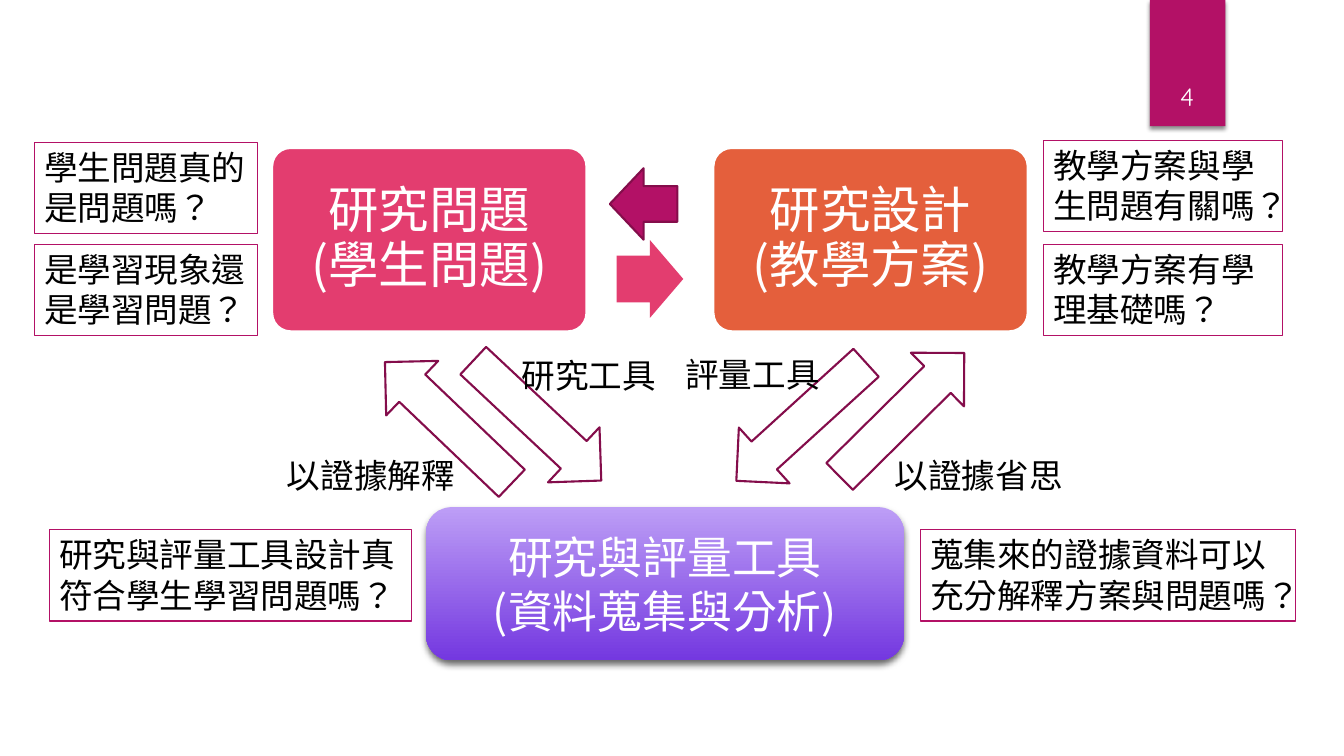
import pptx
import pptx.util
import pptx.dml.color
import pptx.enum.shapes
import pptx.enum.text
import pptx.oxml.ns
import lxml.etree

Cm, Pt = pptx.util.Cm, pptx.util.Pt
SHAPE = pptx.enum.shapes.MSO_SHAPE
ANCHOR = pptx.enum.text.MSO_ANCHOR
ALIGN = pptx.enum.text.PP_ALIGN
qn = pptx.oxml.ns.qn
RGB = pptx.dml.color.RGBColor.from_string
CJK = "Noto Sans CJK SC"
COLORS = {"magenta": "B31166", "plum": "840D4B", "pink": "E33D6F", "orange": "E45F3C",
          "lilac": "BD9EF6", "violet": "7438E0", "white": "FFFFFF", "black": "000000"}


def add_box(kind, x, y, w, h, fill=None, line=None, width=1.5, shadow=None):
    sp = s.shapes.add_shape(kind, Cm(x), Cm(y), Cm(w), Cm(h))
    sp.shadow.inherit = False
    if fill:
        sp.fill.solid()
        sp.fill.fore_color.rgb = RGB(COLORS[fill])
    else:
        sp.fill.background()
    if line:
        sp.line.color.rgb = RGB(COLORS[line])
        sp.line.width = Pt(width)
    else:
        sp.line.fill.background()
    if shadow:
        alpha, blur, dist = shadow
        effects = sp._element.spPr.find(qn("a:effectLst"))
        outer = lxml.etree.SubElement(effects, qn("a:outerShdw"), blurRad=str(Pt(blur)),
                                      dist=str(Pt(dist)), dir="5400000", rotWithShape="0")
        clr = lxml.etree.SubElement(outer, qn("a:srgbClr"), val=COLORS["black"])
        lxml.etree.SubElement(clr, qn("a:alpha"), val=str(alpha * 1000))
    return sp


def write(sp, lines, size, color, align=ALIGN.LEFT, anchor=ANCHOR.TOP, font=CJK):
    tf = sp.text_frame
    tf.word_wrap = True
    tf.vertical_anchor = anchor
    p = tf.paragraphs[0]
    p.alignment = align
    for i, line in enumerate(lines):
        if i:
            p.add_line_break()
        r = p.add_run()
        r.text = line
        r.font.size = Pt(size)
        r.font.name = font
        r.font.color.rgb = RGB(COLORS[color])
        rPr = r.font._element
        rPr.set("lang", "zh-TW")
        lxml.etree.SubElement(rPr, qn("a:ea"), typeface=font)
    return tf


prs = pptx.Presentation()
prs.slide_width, prs.slide_height = Cm(33.87), Cm(19.05)
s = prs.slides.add_slide(prs.slide_layouts[6])

# Page number tab
add_box(SHAPE.RECTANGLE, 28.98, 0, 1.9, 3.18, "magenta", shadow=(45, 3, 2))
tb = s.shapes.add_textbox(Cm(28.75), Cm(0.81), Cm(2.34), Cm(2.13))
write(tb, ["4"], 18, "white", ALIGN.CENTER, ANCHOR.BOTTOM, "Quicksand")

# Research question and research design
for x, fill, lines in [(6.86, "pink", ["研究問題", "(學生問題)"]),
                       (17.98, "orange", ["研究設計", "(教學方案)"])]:
    sp = add_box(SHAPE.ROUNDED_RECTANGLE, x, 3.73, 7.92, 4.62, fill, "white")
    sp.adjustments[0] = 0.1
    tf = write(sp, lines, 36, "white", ALIGN.CENTER, ANCHOR.MIDDLE)
    tf.paragraphs[0].line_spacing = 0.9
    tf.margin_left = tf.margin_right = tf.margin_top = tf.margin_bottom = Cm(0.38)

# Arrows between the two upper boxes
sp = add_box(SHAPE.RIGHT_ARROW, 15.54, 6.05, 1.68, 1.96, "pink")
sp.adjustments[0] = 0.6
add_box(SHAPE.LEFT_ARROW, 15.37, 4.24, 1.7, 1.8, "magenta", "plum")

# Research and assessment tools
sp = add_box(SHAPE.ROUNDED_RECTANGLE, 10.74, 12.78, 12.04, 3.86, shadow=(60, 5, 3))
sp.fill.gradient()
sp.fill.gradient_angle = 270
for stop, name in zip(sp.fill.gradient_stops, ["lilac", "violet"]):
    stop.color.rgb = RGB(COLORS[name])
write(sp, ["研究與評量工具", "(資料蒐集與分析)"], 32, "white", ALIGN.CENTER, ANCHOR.MIDDLE)

# Diagonal arrows to and from the tools
for x, y, angle in [(11.33, 9.65, 43.1), (20.52, 9.5, 315.3),
                    (17.98, 9.68, 137.7), (9.09, 9.7, 223.7)]:
    sp = add_box(SHAPE.RIGHT_ARROW, x, y, 4.42, 1.9, line="plum")
    sp.rotation = angle

# Arrow labels
for x, y, w, label in [(12.9, 8.81, 4.14, "研究工具"), (17.02, 8.79, 4.14, "評量工具"),
                       (22.3, 11.33, 4.85, "以證據省思"), (6.98, 11.33, 4.85, "以證據解釋")]:
    tb = s.shapes.add_textbox(Cm(x), Cm(y), Cm(w), Cm(1.27))
    write(tb, [label], 24, "black")

# Guiding questions
for x, y, w, question in [(0.86, 3.58, 5.64, "學生問題真的是問題嗎？"),
                          (0.86, 6.15, 5.64, "是學習現象還是學習問題？"),
                          (26.29, 6.15, 6.02, "教學方案有學理基礎嗎？"),
                          (26.29, 3.53, 6.02, "教學方案與學生問題有關嗎？"),
                          (1.24, 13.34, 9.12, "研究與評量工具設計真符合學生學習問題嗎？"),
                          (23.19, 13.34, 9.45, "蒐集來的證據資料可以充分解釋方案與問題嗎？")]:
    sp = add_box(SHAPE.RECTANGLE, x, y, w, 2.31, line="magenta", width=0.75)
    write(sp, [question], 24, "black")

prs.save("out.pptx")
